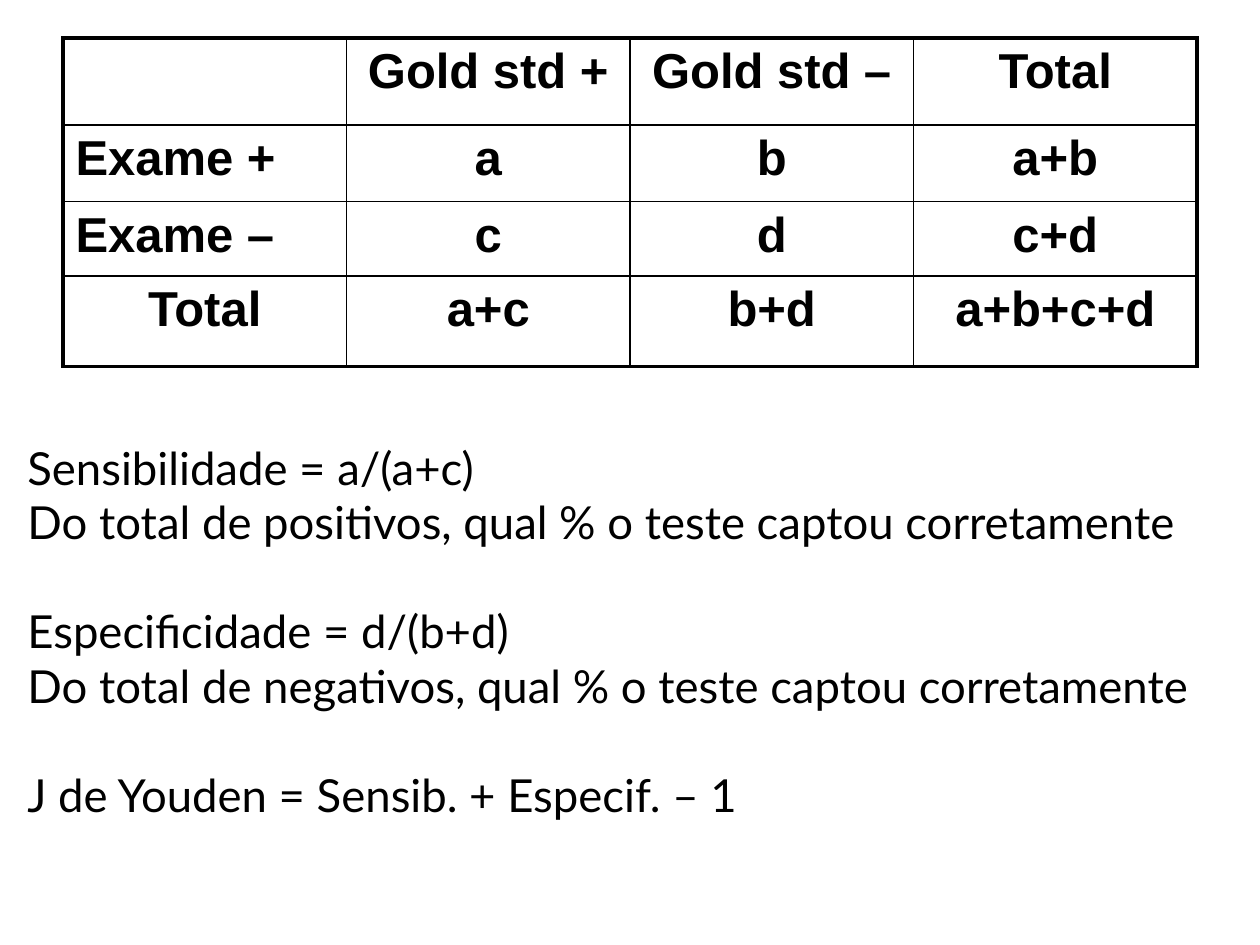
from dataclasses import dataclass

import pptx
import pptx.dml.color
import pptx.enum.text
import pptx.oxml.ns
import pptx.util
from lxml import etree

Pt = pptx.util.Pt
ALIGN = pptx.enum.text.PP_ALIGN


@dataclass(frozen=True)
class Theme:
    ink: str = "000000"
    table_font: str = "Arial"
    body_font: str = "Lato"
    table_size: float = 28
    body_size: float = 26
    outer_border: float = 2.25
    inner_border: float = 1
    group_gap: float = 31.2


THEME = Theme()

ROW_HEIGHTS = [49.7, 43.9, 42.5, 51.8]
CONTINGENCY = [
    ["", "Gold std +", "Gold std –", "Total"],
    ["Exame +", "a", "b", "a+b"],
    ["Exame –", "c", "d", "c+d"],
    ["Total", "a+c", "b+d", "a+b+c+d"],
]
FORMULAS = [
    ["Sensibilidade = a/(a+c)",
     "Do total de positivos, qual % o teste captou corretamente"],
    ["Especificidade = d/(b+d)",
     "Do total de negativos, qual % o teste captou corretamente"],
    ["J de Youden = Sensib. + Especif. – 1"],
]


def write_text(paragraph, text, *, font, size, bold=False, align=ALIGN.LEFT, before=None):
    paragraph.alignment = align
    if before is not None:
        paragraph.space_before = Pt(before)
    run = paragraph.add_run()
    run.text = text
    run.font.name = font
    run.font.size = Pt(size)
    run.font.bold = bold
    run.font.color.rgb = pptx.dml.color.RGBColor.from_string(THEME.ink)


def set_borders(cell, widths):
    properties = cell._tc.get_or_add_tcPr()
    for position, (side, width) in enumerate(widths.items()):
        line = etree.Element(pptx.oxml.ns.qn(f"a:ln{side}"), w=str(Pt(width)))
        fill = etree.SubElement(line, pptx.oxml.ns.qn("a:solidFill"))
        etree.SubElement(fill, pptx.oxml.ns.qn("a:srgbClr"), val=THEME.ink)
        properties.insert(position, line)


def add_contingency_table(slide, left, top, width):
    row_count, column_count = len(CONTINGENCY), len(CONTINGENCY[0])
    table = slide.shapes.add_table(
        row_count, column_count, Pt(left), Pt(top), Pt(width), Pt(sum(ROW_HEIGHTS))
    ).table
    table.first_row = False
    table.horz_banding = False
    for column in table.columns:
        column.width = Pt(width / column_count)
    for row, height in zip(table.rows, ROW_HEIGHTS):
        row.height = Pt(height)

    def border(is_outer):
        return THEME.outer_border if is_outer else THEME.inner_border

    for row_index, labels in enumerate(CONTINGENCY):
        for column_index, label in enumerate(labels):
            cell = table.cell(row_index, column_index)
            cell.fill.background()
            set_borders(cell, {
                "L": border(column_index == 0),
                "R": border(column_index == column_count - 1),
                "T": border(row_index == 0),
                "B": border(row_index == row_count - 1),
            })
            if label:
                write_text(
                    cell.text_frame.paragraphs[0], label,
                    font=THEME.table_font, size=THEME.table_size, bold=True,
                    align=ALIGN.LEFT if label.startswith("Exame") else ALIGN.CENTER,
                )


def add_formulas(slide, left, top, width, height):
    frame = slide.shapes.add_textbox(Pt(left), Pt(top), Pt(width), Pt(height)).text_frame
    frame.word_wrap = True
    frame.auto_size = pptx.enum.text.MSO_AUTO_SIZE.SHAPE_TO_FIT_TEXT
    for group_index, group in enumerate(FORMULAS):
        for line_index, text in enumerate(group):
            is_first = group_index == line_index == 0
            starts_group = group_index > 0 and line_index == 0
            write_text(
                frame.paragraphs[0] if is_first else frame.add_paragraph(), text,
                font=THEME.body_font, size=THEME.body_size,
                before=THEME.group_gap if starts_group else None,
            )


def main():
    presentation = pptx.Presentation()
    presentation.slide_width = Pt(720)
    presentation.slide_height = Pt(540)
    slide = presentation.slides.add_slide(presentation.slide_layouts[6])
    add_formulas(slide, 8.6, 247.7, 696.2, 227.5)
    add_contingency_table(slide, 36, 21.6, 648)
    presentation.save("out.pptx")


if __name__ == "__main__":
    main()
